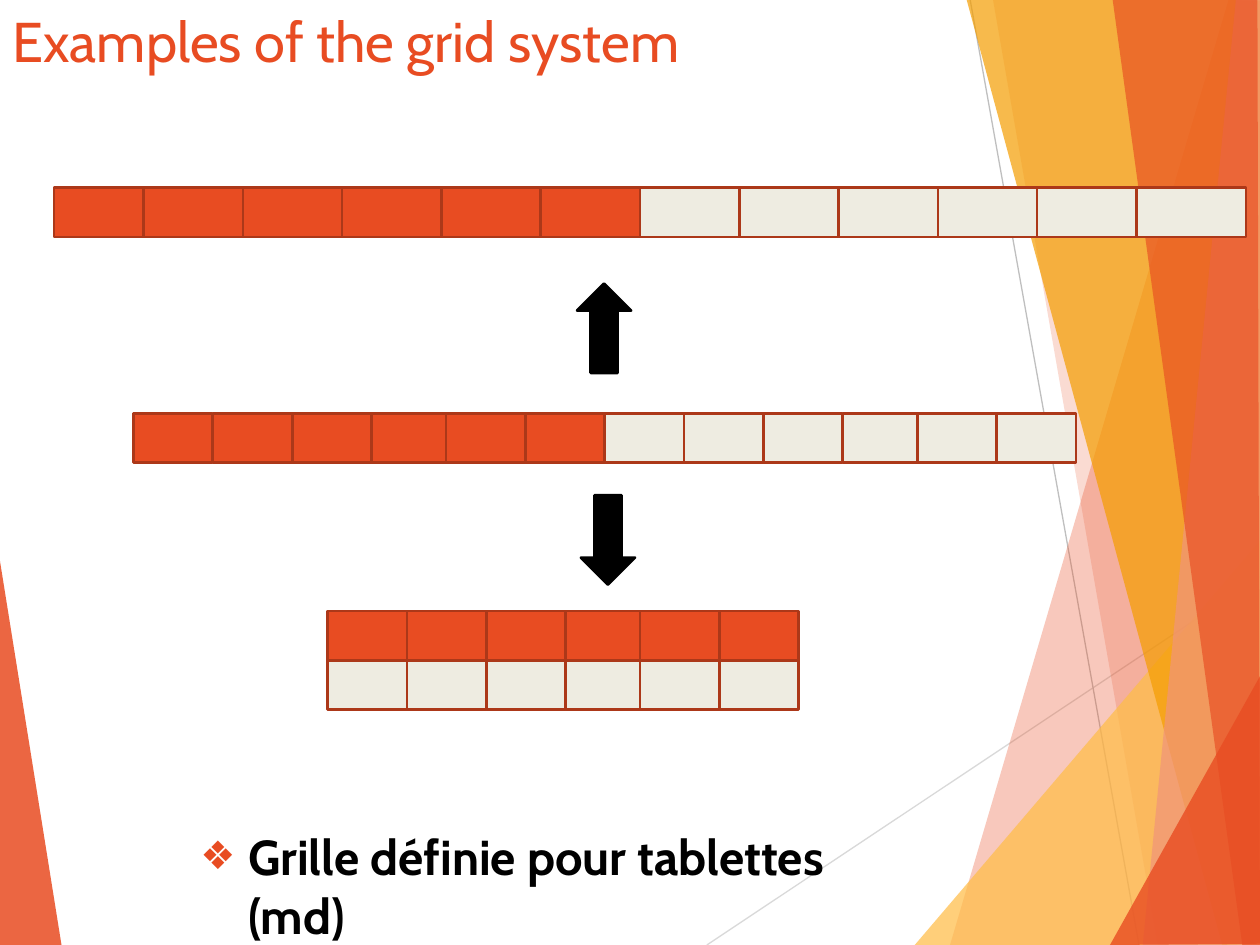
from dataclasses import dataclass

import pptx
import pptx.dml.color
import pptx.enum.dml
import pptx.enum.shapes
import pptx.enum.text
import pptx.oxml
import pptx.oxml.ns
import pptx.util
from lxml import etree

Inches = pptx.util.Inches
Pt = pptx.util.Pt
RGBColor = pptx.dml.color.RGBColor
qn = pptx.oxml.ns.qn
SHAPES = pptx.enum.shapes.MSO_SHAPE

ORANGE = RGBColor(0xE8, 0x4C, 0x22)
RUST = RGBColor(0xAC, 0x38, 0x19)
CREAM = RGBColor(0xEE, 0xEC, 0xE1)
BLACK = RGBColor(0, 0, 0)
YELLOW = RGBColor(0xFF, 0xBD, 0x47)
AMBER = RGBColor(0xF4, 0x9D, 0x00)
SALMON = RGBColor(0xF1, 0x94, 0x7A)
LIGHT_GRAY = RGBColor(0xD9, 0xD9, 0xD9)
GRAY = RGBColor(0xBF, 0xBF, 0xBF)
FONT = "Cabin"
CELL_HEIGHT = 0.39


@dataclass
class Facet:
    points: list[tuple[float, float]]
    color: RGBColor
    opacity: int


@dataclass
class Ray:
    start: tuple[float, float]
    end: tuple[float, float]
    color: RGBColor


@dataclass
class CellRow:
    left: float
    top: float
    offsets: list[float]
    width: float
    colors: list[RGBColor]


@dataclass
class Arrow:
    left: float
    top: float
    rotation: int


LEFT_FACET = Facet([(-0.01, 4.39), (0.49, 7.51), (-0.01, 7.5)], ORANGE, 85)
RAYS = [
    Ray((5.61, 7.5), (10.01, 4.57), LIGHT_GRAY),
    Ray((7.7, 0), (9.04, 7.5), GRAY),
]
RIGHT_FACETS = [
    Facet([(9.75, 0), (7.54, 7.5), (10.02, 7.51), (10.01, 0.01)], ORANGE, 30),
    Facet([(7.88, -0.01), (9.19, 7.5), (10.01, 7.5), (10.01, -0.01)], ORANGE, 20),
    Facet([(7.26, 7.5), (10, 4.29), (10.01, 7.5)], YELLOW, 72),
    Facet([(7.67, -0.01), (9.7, 7.5), (10.01, 7.49), (10.01, -0.01)], AMBER, 70),
    Facet([(9.81, -0.01), (9.07, 7.5), (10.01, 7.5), (10, -0.01)], SALMON, 70),
    Facet([(8.83, -0.01), (9.86, 7.5), (10, 7.5), (9.98, -0.01)], ORANGE, 65),
    Facet([(8.81, 7.5), (10.01, 5.35), (10.01, 7.49)], ORANGE, 80),
]

HALF = [0, 0.63, 1.26, 1.89, 2.48, 3.11]
FULL = HALF + [3.74 + offset for offset in HALF]
WIDE = [0] + [0.71 + 0.788 * step for step in range(11)]
SPLIT = [ORANGE] * 6 + [CREAM] * 6
ROWS = [
    CellRow(1.06, 3.28, FULL, 0.63, SPLIT),
    CellRow(0.43, 1.49, WIDE, 0.87, SPLIT),
    CellRow(2.6, 4.85, HALF, 0.63, [ORANGE] * 6),
    CellRow(2.6, 4.85 + CELL_HEIGHT, HALF, 0.63, [CREAM] * 6),
]
ARROWS = [Arrow(4.58, 2.25, 0), Arrow(4.61, 3.93, 180)]


def draw_facet(page, facet: Facet) -> None:
    points = [(Inches(x), Inches(y)) for x, y in facet.points]
    builder = page.shapes.build_freeform(*points[0], scale=1.0)
    builder.add_line_segments(points[1:], close=True)
    shape = builder.convert_to_shape()
    shape.shadow.inherit = False
    shape.fill.solid()
    shape.fill.fore_color.rgb = facet.color
    shape.line.fill.background()
    color = shape.element.spPr.find(qn("a:solidFill")).find(qn("a:srgbClr"))
    etree.SubElement(color, qn("a:alpha"), val=str(facet.opacity * 1000))


def draw_ray(page, ray: Ray) -> None:
    line = page.shapes.add_connector(
        pptx.enum.shapes.MSO_CONNECTOR.STRAIGHT,
        *(Inches(value) for value in ray.start + ray.end))
    line.line.color.rgb = ray.color
    line.line.width = Pt(0.75)
    etree.SubElement(line.element.spPr, qn("a:effectLst"))


def draw_shape(page, kind, left: float, top: float, width: float, height: float,
               fill: RGBColor, outline: RGBColor):
    shape = page.shapes.add_shape(
        kind, Inches(left), Inches(top), Inches(width), Inches(height))
    shape.shadow.inherit = False
    shape.fill.solid()
    shape.fill.fore_color.rgb = fill
    shape.line.color.rgb = outline
    shape.line.width = Pt(1.5)
    return shape


def draw_row(page, row: CellRow) -> None:
    for offset, color in zip(row.offsets, row.colors):
        draw_shape(page, SHAPES.RECTANGLE, row.left + offset, row.top,
                   row.width, CELL_HEIGHT, color, RUST)


def draw_arrow(page, arrow: Arrow) -> None:
    shape = draw_shape(page, SHAPES.UP_ARROW, arrow.left, arrow.top,
                       0.43, 0.71, BLACK, BLACK)
    shape.rotation = arrow.rotation


def add_bullet(para) -> None:
    properties = para._p.get_or_add_pPr()
    properties.set("marL", str(Inches(0.38)))
    properties.set("indent", str(-Inches(0.38)))
    color = etree.SubElement(properties, qn("a:buClr"))
    etree.SubElement(color, qn("a:srgbClr"), val=str(ORANGE))
    etree.SubElement(properties, qn("a:buSzPct"), val="80000")
    etree.SubElement(properties, qn("a:buChar"), char="❖")


def fill_placeholder(page, box, place: tuple[float, ...], text: str, size: int,
                     color: RGBColor, bold: bool, bullet: bool) -> None:
    """Place the box in front of what is drawn so far and write its text."""
    page.shapes.element.append(box.element)
    box.left, box.top, box.width, box.height = (Inches(value) for value in place)
    frame = box.text_frame
    frame.word_wrap = True
    frame.auto_size = pptx.enum.text.MSO_AUTO_SIZE.NONE
    frame.vertical_anchor = pptx.enum.text.MSO_ANCHOR.TOP
    para = frame.paragraphs[0]
    if bullet:
        add_bullet(para)
    para.alignment = pptx.enum.text.PP_ALIGN.LEFT
    para.space_before = Pt(0)
    span = para.add_run()
    span.text = text
    span.font.name = FONT
    span.font.size = Pt(size)
    span.font.bold = bold
    span.font.color.rgb = color


def main() -> None:
    deck = pptx.Presentation()
    deck.slide_width, deck.slide_height = Inches(10), Inches(7.5)
    page = deck.slides.add_slide(deck.slide_layouts[1])

    draw_facet(page, LEFT_FACET)
    for ray in RAYS:
        draw_ray(page, ray)
    for facet in RIGHT_FACETS:
        draw_facet(page, facet)

    fill_placeholder(page, page.shapes.title, (0, 0, 10, 0.95),
                     "Examples of the grid system", 32, ORANGE, False, False)
    fill_placeholder(page, page.placeholders[1], (1.49, 6.51, 5.95, 0.66),
                     "Grille définie pour tablettes (md)", 28, BLACK, True, True)
    for row in ROWS:
        draw_row(page, row)
    for arrow in ARROWS:
        draw_arrow(page, arrow)

    deck.save("out.pptx")


if __name__ == "__main__":
    main()
